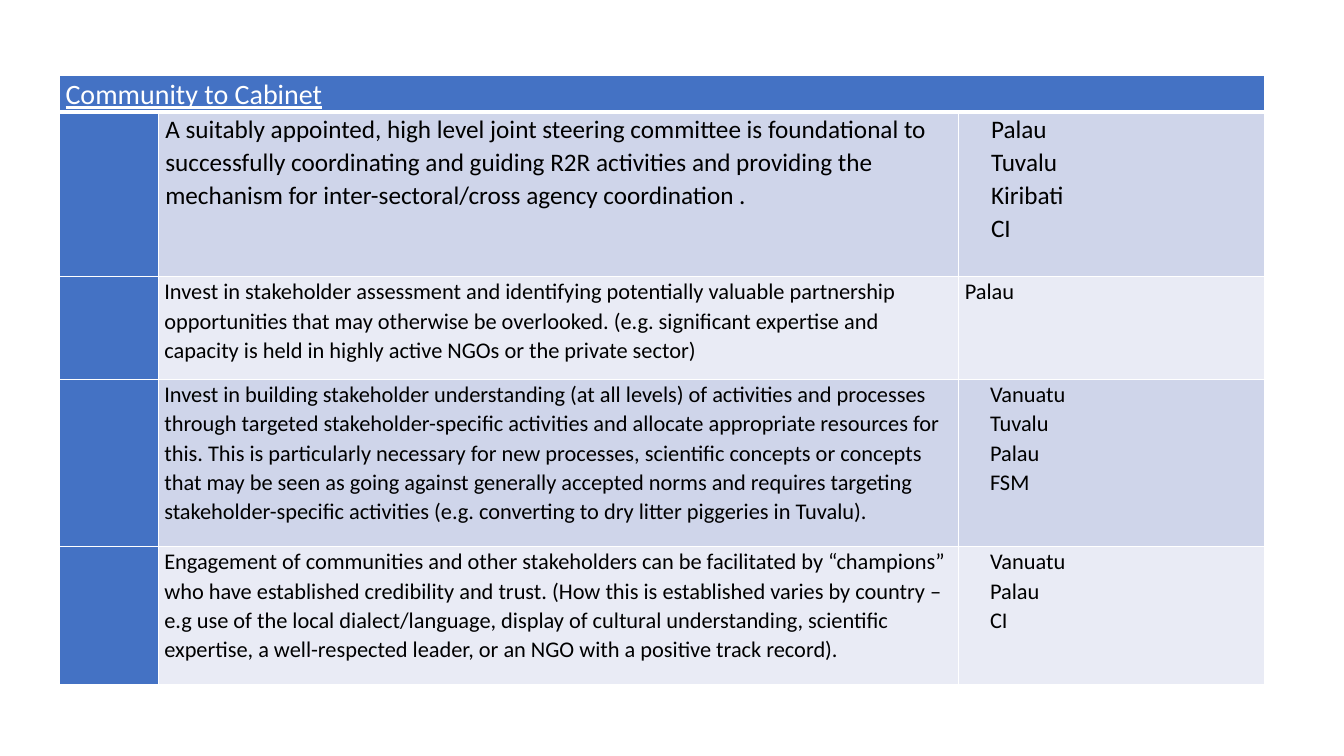
from dataclasses import dataclass

from lxml import etree
from pptx import Presentation
from pptx.dml.color import RGBColor
from pptx.oxml.ns import qn
from pptx.util import Emu, Inches, Pt

SLIDE_W, SLIDE_H = Inches(13.33), Inches(7.5)
LEFT, TOP = Inches(0.59), Inches(0.75)
COLUMNS = [Inches(w) for w in (0.98, 7.94, 3.03)]
ROWS = [Inches(h) for h in (0.36, 1.63, 1.02, 1.66, 1.37)]
COUNTRY_INDENT = Inches(0.25)


@dataclass(frozen=True)
class Theme:
    font: str = "Calibri"
    accent: str = "4472C4"
    bands: tuple = ("CFD5EA", "E9EBF5")
    light: str = "FFFFFF"
    dark: str = "000000"
    title_size: int = 20
    lead_size: int = 18
    body_size: int = 16
    line_spacing: float = 1.07
    rule: int = 1
    header_rule: int = 3


THEME = Theme()

HEADING = "Community to Cabinet"
# Lesson, countries, whether the countries are indented
LESSONS = [
    ("A suitably appointed, high level joint steering committee is foundational to "
     "successfully coordinating and guiding R2R activities and providing the mechanism "
     "for inter-sectoral/cross agency coordination .",
     ["Palau", "Tuvalu", "Kiribati", "CI"], True),
    ("Invest in stakeholder assessment and identifying potentially valuable partnership "
     "opportunities that may otherwise be overlooked. (e.g. significant expertise and "
     "capacity is held in highly active NGOs or the private sector)",
     ["Palau"], False),
    ("Invest in building stakeholder understanding (at all levels) of activities and "
     "processes through targeted stakeholder-specific activities and allocate appropriate "
     "resources for this. This is particularly necessary for new processes, scientific "
     "concepts or concepts that may be seen as going against generally accepted norms and "
     "requires targeting stakeholder-specific activities (e.g. converting to dry litter "
     "piggeries in Tuvalu).",
     ["Vanuatu", "Tuvalu", "Palau", "FSM"], True),
    ("Engagement of communities and other stakeholders can be facilitated by “champions” "
     "who have established credibility and trust. (How this is established varies by "
     "country – e.g use of the local dialect/language, display of cultural understanding, "
     "scientific expertise, a well-respected leader, or an NGO with a positive track record).",
     ["Vanuatu", "Palau", "CI"], True),
]


def paint_cell(cell, fill, bottom=THEME.rule):
    """Rule all four sides, then fill: the schema wants the lines first."""
    properties = cell._tc.get_or_add_tcPr()
    for side in ("lnL", "lnR", "lnT", "lnB"):
        width = bottom if side == "lnB" else THEME.rule
        line = etree.SubElement(properties, qn(f"a:{side}"), w=str(Pt(width)))
        solid = etree.SubElement(line, qn("a:solidFill"))
        etree.SubElement(solid, qn("a:srgbClr"), val=THEME.light)
    cell.fill.solid()
    cell.fill.fore_color.rgb = RGBColor.from_string(fill)


def write_cell(cell, lines, size, color=THEME.dark, inset=0.06, indent=0, underline=False):
    margins = {"margin_left": Inches(inset), "margin_right": Inches(inset),
               "margin_top": 0, "margin_bottom": 0}
    for name, value in margins.items():
        setattr(cell, name, value)
    font_format = {"name": THEME.font, "size": Pt(size), "bold": False,
                   "underline": underline}
    frame = cell.text_frame
    for number, line in enumerate(lines):
        paragraph = frame.add_paragraph() if number else frame.paragraphs[0]
        paragraph.line_spacing = THEME.line_spacing
        paragraph._p.get_or_add_pPr().set("marL", str(indent))
        run = paragraph.add_run()
        run.text = line
        for name, value in font_format.items():
            setattr(run.font, name, value)
        run.font.color.rgb = RGBColor.from_string(color)


def add_grid(slide):
    table = slide.shapes.add_table(len(ROWS), len(COLUMNS), LEFT, TOP,
                                   Emu(sum(COLUMNS)), Emu(sum(ROWS))).table
    table.first_row = table.horz_banding = False
    for column, width in zip(table.columns, COLUMNS):
        column.width = width
    for row, height in zip(table.rows, ROWS):
        row.height = height
    return table


def fill_heading(table):
    for cell in table.rows[0].cells:
        paint_cell(cell, THEME.accent, THEME.header_rule)
    heading = table.cell(0, 0)
    heading.merge(table.cell(0, len(COLUMNS) - 1))
    write_cell(heading, [HEADING], THEME.title_size, THEME.light, underline=True)


def fill_lesson(table, row, lesson, countries, indented):
    band = THEME.bands[(row - 1) % len(THEME.bands)]
    for column, fill in enumerate((THEME.accent, band, band)):
        paint_cell(table.cell(row, column), fill)
    is_lead = row == 1
    size = THEME.lead_size if is_lead else THEME.body_size
    inset = 0.07 if is_lead else 0.06
    write_cell(table.cell(row, 1), [lesson], size, inset=inset)
    write_cell(table.cell(row, 2), countries, size, inset=inset,
               indent=COUNTRY_INDENT if indented else 0)


def main():
    presentation = Presentation()
    presentation.slide_width, presentation.slide_height = SLIDE_W, SLIDE_H
    slide = presentation.slides.add_slide(presentation.slide_layouts[6])
    table = add_grid(slide)
    fill_heading(table)
    for row, lesson in enumerate(LESSONS, start=1):
        fill_lesson(table, row, *lesson)
    presentation.save("out.pptx")


if __name__ == "__main__":
    main()
